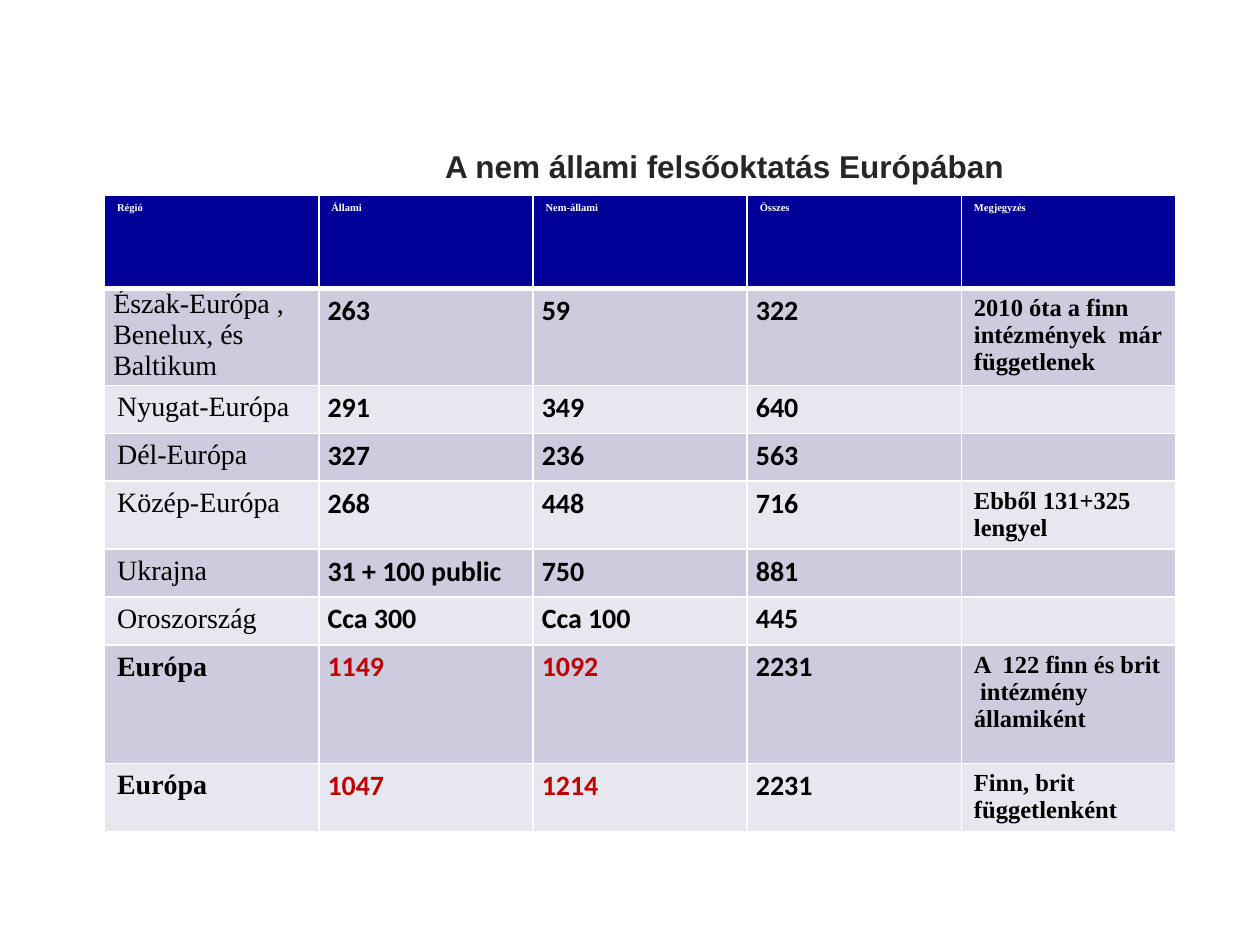
from dataclasses import dataclass

from lxml.etree import SubElement
from pptx import Presentation
from pptx.dml.color import RGBColor as RGB
from pptx.enum.text import MSO_ANCHOR as Anchor, PP_ALIGN as Align
from pptx.oxml.ns import qn
from pptx.util import Inches, Pt


@dataclass(frozen=True)
class Theme:
    title_ink: str = "262626"
    ink: str = "000000"
    accent: str = "C00000"
    white: str = "FFFFFF"
    header: str = "000099"
    bands: tuple = ("CCCCDE", "E7E7EF")
    title_size: int = 18
    header_size: int = 6
    body_size: int = 16
    note_size: int = 14
    title_font: str = "Arial"
    serif: str = "Times New Roman"
    sans: str = "Calibri"
    thin: int = 1
    thick: int = 3


TITLE = "A nem állami felsőoktatás Európában"
HEADER = ["Régió", "Állami", "Nem-állami", "Összes", "Megjegyzés"]
REGIONS = [
    ["Észak-Európa , Benelux, és Baltikum", "263", "59", "322",
     "2010 óta a finn intézmények  már függetlenek"],
    ["Nyugat-Európa", "291", "349", "640", ""],
    ["Dél-Európa", "327", "236", "563", ""],
    ["Közép-Európa", "268", "448", "716", "Ebből 131+325 lengyel"],
    ["Ukrajna", "31 + 100 public", "750", "881", ""],
    ["Oroszország", "Cca 300", "Cca 100", "445", ""],
]
TOTALS = [
    ["Európa", "1149", "1092", "2231",
     "A  122 finn és brit  intézmény  államiként"],
    ["Európa", "1047", "1214", "2231", "Finn, brit függetlenként"],
]
ROW_HEIGHTS = [7.4, 7.7, 3.8, 3.8, 5.4, 3.8, 3.8, 9.4, 5.4]
COLUMN_WIDTH = 17


class SlideBuilder:
    COLUMNS, ROWS = 100, 75

    def __init__(self, prs, theme):
        self.prs, self.theme = prs, theme
        self.s = prs.slides.add_slide(prs.slide_layouts[5])

    def x(self, columns):
        return round(self.prs.slide_width * columns / self.COLUMNS)

    def y(self, rows):
        return round(self.prs.slide_height * rows / self.ROWS)

    def box(self, left, top, width, height):
        return self.x(left), self.y(top), self.x(width), self.y(height)

    def style_text(self, p, text, color, **style):
        p.text = text
        for name, value in style.items():
            setattr(p.font, name, value)
        p.font.color.rgb = RGB.from_string(color)

    def title(self, text, *place):
        t, sp = self.theme, self.s.shapes.title
        sp.left, sp.top, sp.width, sp.height = self.box(*place)
        tf = sp.text_frame
        tf.vertical_anchor = Anchor.MIDDLE
        p = tf.paragraphs[0]
        self.style_text(p, text, t.title_ink, name=t.title_font,
                        size=Pt(t.title_size), bold=True)
        p.alignment = Align.CENTER

    def borders(self, cell, **widths):
        tcPr = cell._tc.get_or_add_tcPr()
        for side in "LRTB":
            width = Pt(widths.get(side, self.theme.thin))
            line = SubElement(tcPr, qn(f"a:ln{side}"), w=str(width))
            fill = SubElement(line, qn("a:solidFill"))
            SubElement(fill, qn("a:srgbClr"), val=self.theme.white)

    def fill(self, cell, color):
        cell.fill.solid()
        cell.fill.fore_color.rgb = RGB.from_string(color)

    def tighten(self, cell):
        insets = {"margin_left": 0.07, "margin_right": 0.07,
                  "margin_top": 0, "margin_bottom": 0}
        for name, value in insets.items():
            setattr(cell, name, Inches(value))

    def header_cell(self, cell, text):
        t = self.theme
        self.borders(cell, B=t.thick)
        self.fill(cell, t.header)
        self.style_text(cell.text_frame.paragraphs[0], text, t.white,
                        name=t.serif, size=Pt(t.header_size), bold=True)

    def body_cell(self, cell, text, row, column, total):
        t = self.theme
        figure, note = 1 <= column <= 3, column == 4
        self.borders(cell, T=t.thick if row == 1 else t.thin)
        self.fill(cell, t.bands[(row - 1) % 2])
        if figure or (row, column) == (1, 0):
            self.tighten(cell)
        p = cell.text_frame.paragraphs[0]
        color = t.accent if total and column in (1, 2) else t.ink
        self.style_text(p, text, color,
                        name=t.sans if figure else t.serif,
                        size=Pt(t.note_size if note else t.body_size),
                        bold=column > 0 or total)
        if figure:
            p.line_spacing = 1.15

    def table(self, header, regions, totals, left, top, width, heights):
        body = regions + totals
        place = self.box(left, top, width * len(header), sum(heights))
        table = self.s.shapes.add_table(len(body) + 1, len(header), *place).table
        for column in table.columns:
            column.width = self.x(width)
        for row, height in zip(table.rows, heights):
            row.height = self.y(height)
        for c, text in enumerate(header):
            self.header_cell(table.cell(0, c), text)
        for r, values in enumerate(body, 1):
            for c, text in enumerate(values):
                self.body_cell(table.cell(r, c), text, r, c, r > len(regions))


def main():
    prs = Presentation()
    prs.slide_width, prs.slide_height = Inches(10), Inches(7.5)
    slide = SlideBuilder(prs, Theme())
    slide.title(TITLE, 15, 11.5, 85, 3.3)
    slide.table(HEADER, REGIONS, TOTALS, 8.3, 15.5, COLUMN_WIDTH, ROW_HEIGHTS)
    prs.save("out.pptx")


if __name__ == "__main__":
    main()
